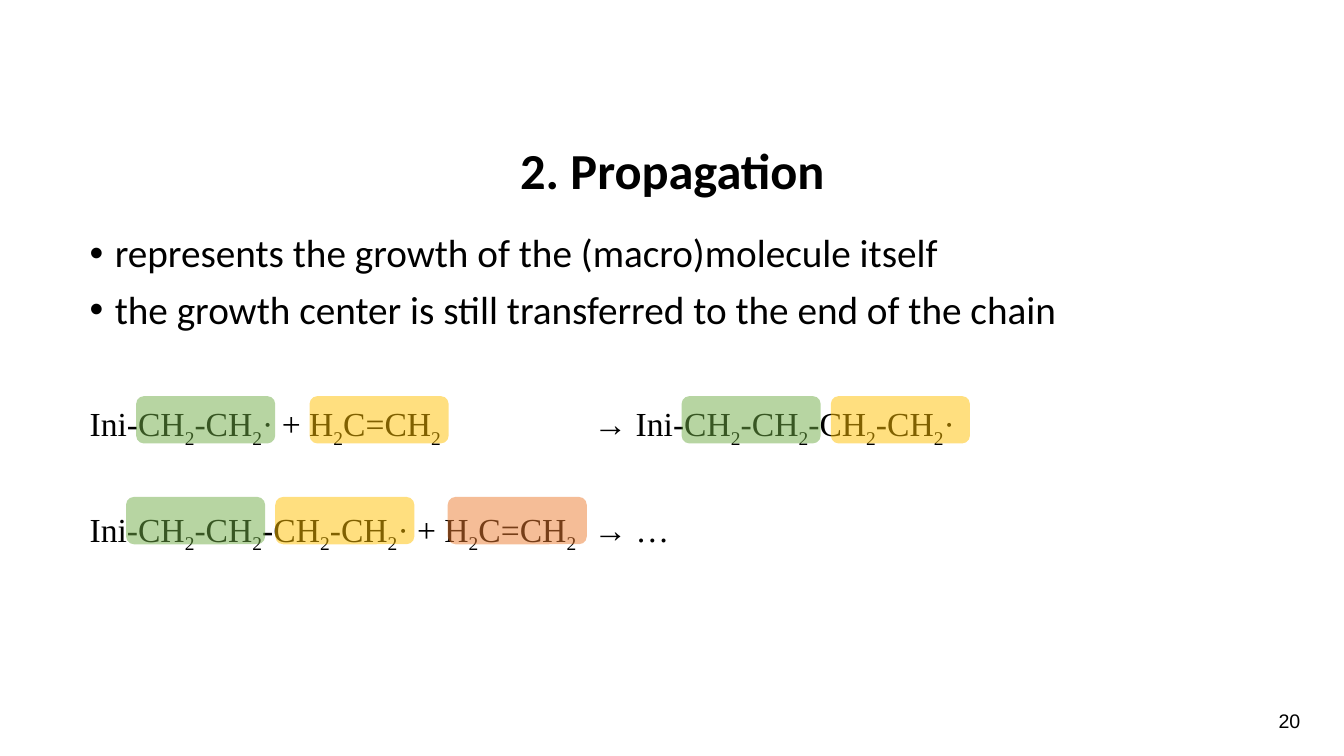
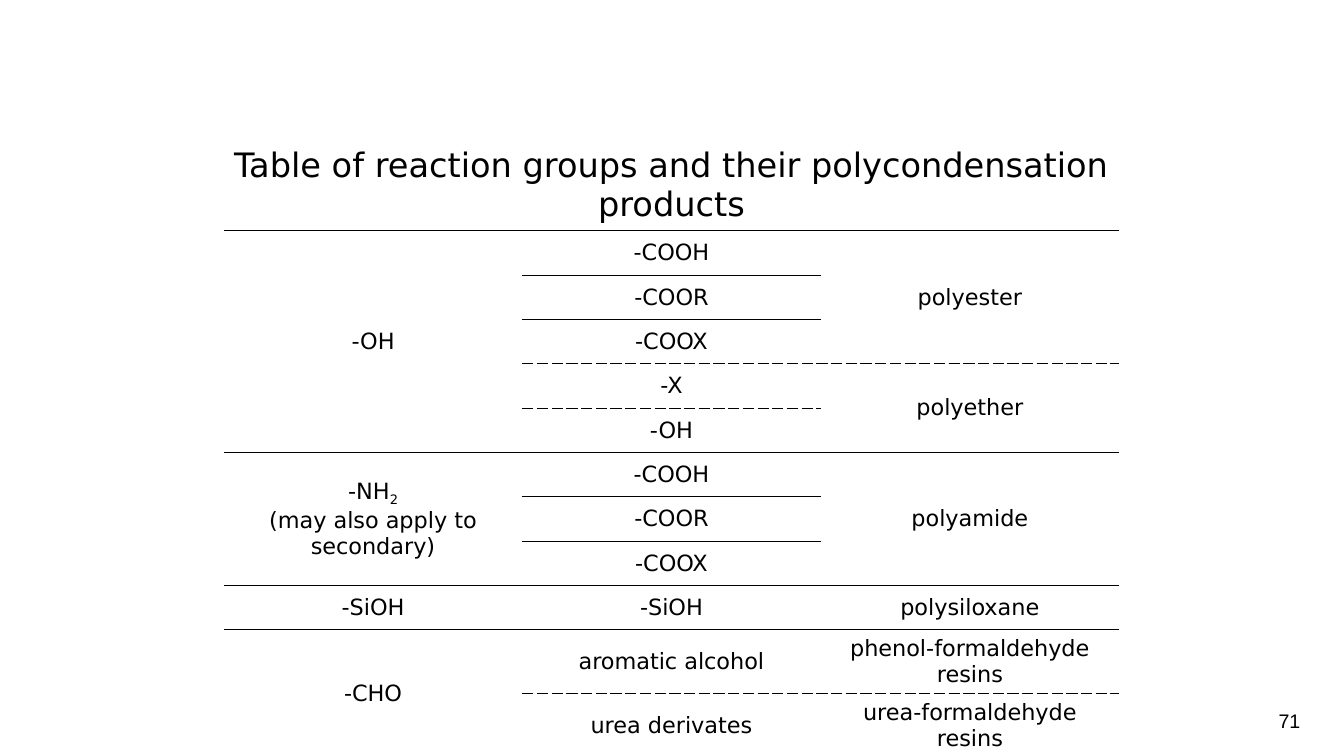
"""Build two polymer chemistry slides: chain propagation and polycondensation products."""
import lxml.etree
import pptx
import pptx.dml.color
import pptx.enum.shapes
import pptx.enum.text
import pptx.oxml.ns
import pptx.util

Inches = pptx.util.Inches
Pt = pptx.util.Pt
qn = pptx.oxml.ns.qn
ALIGN = pptx.enum.text.PP_ALIGN
ANCHOR = pptx.enum.text.MSO_ANCHOR

BLACK = pptx.dml.color.RGBColor(0x00, 0x00, 0x00)
GREEN = pptx.dml.color.RGBColor(0x70, 0xAD, 0x47)
YELLOW = pptx.dml.color.RGBColor(0xFF, 0xC0, 0x00)
ORANGE = pptx.dml.color.RGBColor(0xED, 0x7D, 0x31)
NO_GRID_STYLE = "{2D5ABB26-0587-4C30-8999-92F81FD0307C}"


class Deck:
    def __init__(self):
        self.prs = pptx.Presentation()
        self.prs.slide_width = Inches(13.33)
        self.prs.slide_height = Inches(7.5)
        self.s = None

    def slide(self, number):
        self.s = self.prs.slides.add_slide(self.prs.slide_layouts[6])
        tf = self.box(12.51, 6.95, 0.56, 0.4, ANCHOR.MIDDLE)
        self.add_text(tf.paragraphs[0], str(number), "Arial", 14, align=ALIGN.CENTER)

    def box(self, x, y, w, h, anchor=ANCHOR.TOP):
        tf = self.s.shapes.add_textbox(Inches(x), Inches(y), Inches(w), Inches(h)).text_frame
        tf.word_wrap = True
        tf.vertical_anchor = anchor
        return tf

    def add_run(self, p, text, font, size, bold, subscript=False):
        r = p.add_run()
        r.text = text
        r.font.name = font
        r.font.size = Pt(size)
        r.font.bold = bold
        r.font.color.rgb = BLACK
        if subscript:
            r._r.get_or_add_rPr().set("baseline", "-25000")

    def add_text(self, p, text, font, size, bold=False, align=ALIGN.LEFT):
        p.alignment = align
        for i, line in enumerate(text.split("\n")):
            if i:
                p.add_line_break()
            plain, *rest = line.split("_")
            self.add_run(p, plain, font, size, bold)
            for part in rest:
                self.add_run(p, part[0], font, size, bold, subscript=True)
                if part[1:]:
                    self.add_run(p, part[1:], font, size, bold)

    def title(self, text):
        p = self.box(0.92, 0.99, 11.5, 1.45, ANCHOR.MIDDLE).paragraphs[0]
        p.line_spacing = 0.9
        self.add_text(p, text, "Calibri", 36, bold=True, align=ALIGN.CENTER)

    def body(self, bullets, reactions):
        tf = self.box(0.79, 2.27, 11.75, 4.88)
        for i, text in enumerate(bullets):
            p = tf.add_paragraph() if i else tf.paragraphs[0]
            p.line_spacing = 0.9
            p.space_before = Pt(10 if i else 0)
            pPr = p._p.get_or_add_pPr()
            pPr.set("marL", str(Inches(0.25)))
            pPr.set("indent", str(-Inches(0.25)))
            lxml.etree.SubElement(pPr, qn("a:buFont"), typeface="Arial")
            lxml.etree.SubElement(pPr, qn("a:buChar"), char="•")
            self.add_text(p, text, "Calibri", 28)
        for text, gap in reactions:
            p = tf.add_paragraph()
            p.line_spacing = 0.9
            p.space_before = Pt(gap)
            tabs = lxml.etree.SubElement(p._p.get_or_add_pPr(), qn("a:tabLst"))
            lxml.etree.SubElement(tabs, qn("a:tab"), pos=str(Inches(5)), algn="l")
            self.add_text(p, text, "Times New Roman", 24)

    def highlight(self, x, y, color):
        sp = self.s.shapes.add_shape(pptx.enum.shapes.MSO_SHAPE.ROUNDED_RECTANGLE,
                                     Inches(x), Inches(y), Inches(1.38), Inches(0.47))
        sp.shadow.inherit = False
        sp.line.fill.background()
        sp.fill.solid()
        sp.fill.fore_color.rgb = color
        clr = sp._element.spPr.find(qn("a:solidFill")).find(qn("a:srgbClr"))
        lxml.etree.SubElement(clr, qn("a:alpha"), val="50000")

    def edge(self, cell, side, dash):
        tcPr = cell._tc.get_or_add_tcPr()
        ln = lxml.etree.SubElement(tcPr, qn("a:ln" + side), w=str(Pt(1)))
        fill = lxml.etree.SubElement(ln, qn("a:solidFill"))
        lxml.etree.SubElement(fill, qn("a:srgbClr"), val=str(BLACK))
        lxml.etree.SubElement(ln, qn("a:prstDash"), val=dash)

    def table(self, x, y, col_width, heights, entries):
        cols = 3
        rows = len(heights)
        table = self.s.shapes.add_table(rows, cols, Inches(x), Inches(y), Inches(cols * col_width),
                                        Inches(sum(heights))).table
        table.first_row = table.horz_banding = False
        table._tbl.tblPr.find(qn("a:tableStyleId")).text = NO_GRID_STYLE
        for column in table.columns:
            column.width = Inches(col_width)
        for row, height in zip(table.rows, heights):
            row.height = Inches(height)
        for row, col, row_span, col_span, text, size, dash in entries:
            cell = table.cell(row, col)
            below = row + row_span
            if row_span * col_span > 1:
                cell.merge(table.cell(below - 1, col + col_span - 1))
            cell.vertical_anchor = ANCHOR.MIDDLE
            self.add_text(cell.text_frame.paragraphs[0], text, "DejaVu Sans", size, align=ALIGN.CENTER)
            if dash:
                for c in range(col, col + col_span):
                    self.edge(table.cell(below - 1, c), "B", dash)
                    self.edge(table.cell(below, c), "T", dash)
        for cell in table.iter_cells():
            cell.fill.background()


def propagation(deck):
    deck.slide(20)
    deck.title("2. Propagation")
    deck.body(
        ["represents the growth of the (macro)molecule itself",
         "the growth center is still transferred to the end of the chain"],
        [("Ini-CH_2-CH_2· + H_2C=CH_2\t→ Ini-CH_2-CH_2-CH_2-CH_2·", 51),
         ("Ini-CH_2-CH_2-CH_2-CH_2· + H_2C=CH_2\t→ …", 46)])
    units = {
        3.93: [(1.35, GREEN), (3.07, YELLOW), (6.76, GREEN), (8.24, YELLOW)],
        4.93: [(1.25, GREEN), (2.73, YELLOW), (4.44, ORANGE)],
    }
    for y, row in units.items():
        for x, color in row:
            deck.highlight(x, y, color)


def polycondensation(deck):
    deck.slide(71)
    solid, dashed = "solid", "lgDash"
    groups = [
        (1, 0, 5, "-OH", solid),
        (1, 1, 1, "-COOH", solid),
        (1, 2, 3, "polyester", dashed),
        (2, 1, 1, "-COOR", None),
        (3, 1, 1, "-COOX", dashed),
        (4, 1, 1, "-X", dashed),
        (4, 2, 2, "polyether", solid),
        (5, 1, 1, "-OH", solid),
        (6, 0, 3, "-NH_2\n(may also apply to secondary)", solid),
        (6, 1, 1, "-COOH", solid),
        (6, 2, 3, "polyamide", solid),
        (7, 1, 1, "-COOR", None),
        (8, 1, 1, "-COOX", solid),
        (9, 0, 1, "-SiOH", solid),
        (9, 1, 1, "-SiOH", solid),
        (9, 2, 1, "polysiloxane", solid),
        (10, 0, 2, "-CHO", None),
        (10, 1, 1, "aromatic alcohol", dashed),
        (10, 2, 1, "phenol-formaldehyde resins", dashed),
        (11, 1, 1, "urea derivates", None),
        (11, 2, 1, "urea-formaldehyde resins", None),
    ]
    heading = (0, 0, 1, 3, "Table of reaction groups and their polycondensation products", 24, solid)
    entries = [(row, col, span, 1, text, 16, dash) for row, col, span, text, dash in groups]
    deck.table(2.22, 1.39, 2.96, [0.44] * 10 + [0.6] * 2, [heading] + entries)


def main():
    deck = Deck()
    propagation(deck)
    polycondensation(deck)
    deck.prs.save("out.pptx")


if __name__ == "__main__":
    main()
